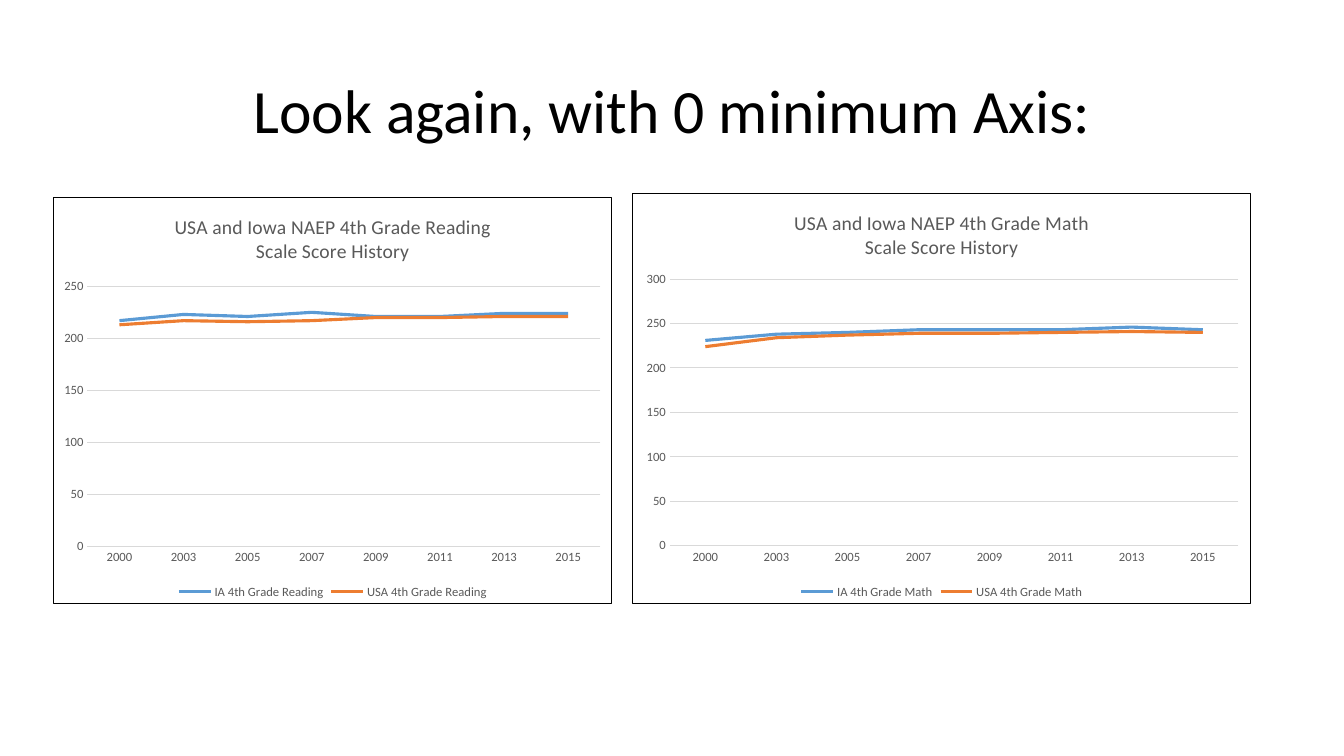
from lxml import etree
from pptx import Presentation
from pptx.chart.data import CategoryChartData
from pptx.dml.color import RGBColor
from pptx.enum.chart import XL_CHART_TYPE, XL_LEGEND_POSITION, XL_TICK_MARK
from pptx.enum.text import MSO_ANCHOR, PP_ALIGN
from pptx.oxml import parse_xml
from pptx.oxml.ns import nsdecls, qn
from pptx.util import Inches, Pt

LINE_CHART = XL_CHART_TYPE.LINE
LEGEND_BOTTOM = XL_LEGEND_POSITION.BOTTOM
NO_TICKS = XL_TICK_MARK.NONE
MIDDLE = MSO_ANCHOR.MIDDLE
CENTER = PP_ALIGN.CENTER

BLACK = RGBColor(0x00, 0x00, 0x00)
GRAY = RGBColor(0x59, 0x59, 0x59)
LIGHT_GRAY = RGBColor(0xD9, 0xD9, 0xD9)
BLUE = RGBColor(0x5B, 0x9B, 0xD5)
ORANGE = RGBColor(0xED, 0x7D, 0x31)
FONT = "Calibri"

YEARS = ["2000", "2003", "2005", "2007", "2009", "2011", "2013", "2015"]
# Subject, chart box in inches, plot box as fractions of the chart, scores, axis top
SUBJECTS = [
    ("Reading", (0.53, 1.95, 5.54, 4.04), (0.06, 0.22, 0.92, 0.64),
     [217, 223, 221, 225, 221, 221, 224, 224],
     [213, 217, 216, 217, 220, 220, 221, 221], 250),
    ("Math", (6.27, 1.91, 6.14, 4.08), (0.06, 0.21, 0.92, 0.65),
     [231, 238, 240, 243, 243, 243, 246, 243],
     [224, 234, 237, 239, 239, 240, 241, 240], 300),
]


def style_font(font, size, color):
    font.name = FONT
    font.size = Pt(size)
    font.bold = False
    font.color.rgb = color


def write_text(frame, text, *, size, color, line_spacing=None):
    """Write each line of the text as a centred paragraph."""
    frame.text = text
    for paragraph in frame.paragraphs:
        paragraph.alignment = CENTER
        paragraph.line_spacing = line_spacing
        for run in paragraph.runs:
            style_font(run.font, size, color)


prs = Presentation()
prs.slide_width = Inches(13.33)
prs.slide_height = Inches(7.5)
slide = prs.slides.add_slide(prs.slide_layouts[5])

heading = slide.shapes.title
heading.left, heading.top = Inches(0.92), Inches(0.4)
heading.width, heading.height = Inches(11.5), Inches(1.45)
heading.text_frame.vertical_anchor = MIDDLE
write_text(heading.text_frame, "Look again, with 0 minimum Axis:",
           size=44, color=BLACK, line_spacing=0.9)

for subject, box, plot_box, iowa_scores, usa_scores, axis_top in SUBJECTS:
    scores = CategoryChartData(number_format="0")
    scores.categories = YEARS
    scores.add_series(f"IA 4th Grade {subject}", iowa_scores)
    scores.add_series(f"USA 4th Grade {subject}", usa_scores)
    chart = slide.shapes.add_chart(LINE_CHART, *map(Inches, box), scores).chart
    style_font(chart.font, 10, BLACK)

    chart.has_title = True
    write_text(chart.chart_title.text_frame,
               f"USA and Iowa NAEP 4th Grade {subject}\nScale Score History",
               size=14, color=GRAY)
    chart.chart_title.include_in_layout = False

    chart.has_legend = True
    chart.legend.position = LEGEND_BOTTOM
    chart.legend.include_in_layout = False
    style_font(chart.legend.font, 9, GRAY)

    for axis in (chart.category_axis, chart.value_axis):
        axis.major_tick_mark = NO_TICKS
        axis.minor_tick_mark = NO_TICKS
        style_font(axis.tick_labels.font, 9, GRAY)
    year_line = chart.category_axis.format.line
    year_line.color.rgb = LIGHT_GRAY
    year_line.width = Pt(0.75)

    score_axis = chart.value_axis
    score_axis.minimum_scale = 0
    score_axis.maximum_scale = axis_top
    score_axis.major_unit = 50
    score_axis.tick_labels.number_format = "0"
    score_axis.tick_labels.number_format_is_linked = False
    score_axis.format.line.fill.background()
    score_axis.has_major_gridlines = True
    score_axis.major_gridlines.format.line.color.rgb = LIGHT_GRAY
    score_axis.major_gridlines.format.line.width = Pt(0.75)

    chart.plots[0].vary_by_categories = False
    for series, color in zip(chart.plots[0].series, (BLUE, ORANGE)):
        series.smooth = False
        series.format.line.color.rgb = color
        series.format.line.width = Pt(2.25)

    plot_area = chart.element.find(f"{qn('c:chart')}/{qn('c:plotArea')}")
    for automatic_layout in plot_area.findall(qn("c:layout")):
        plot_area.remove(automatic_layout)
    layout = parse_xml(f"<c:layout {nsdecls('c')}><c:manualLayout/></c:layout>")
    settings = [("layoutTarget", "inner"), ("xMode", "edge"), ("yMode", "edge"),
                *zip("xywh", plot_box)]
    for tag, value in settings:
        etree.SubElement(layout[0], qn(f"c:{tag}")).set("val", str(value))
    plot_area.insert(0, layout)

    chart.element.find(qn("c:chart")).addnext(parse_xml(
        f"<c:spPr {nsdecls('c', 'a')}><a:noFill/><a:ln w='{Pt(0.75)}'><a:solidFill>"
        f"<a:srgbClr val='{BLACK}'/></a:solidFill></a:ln></c:spPr>"))

prs.save("out.pptx")
